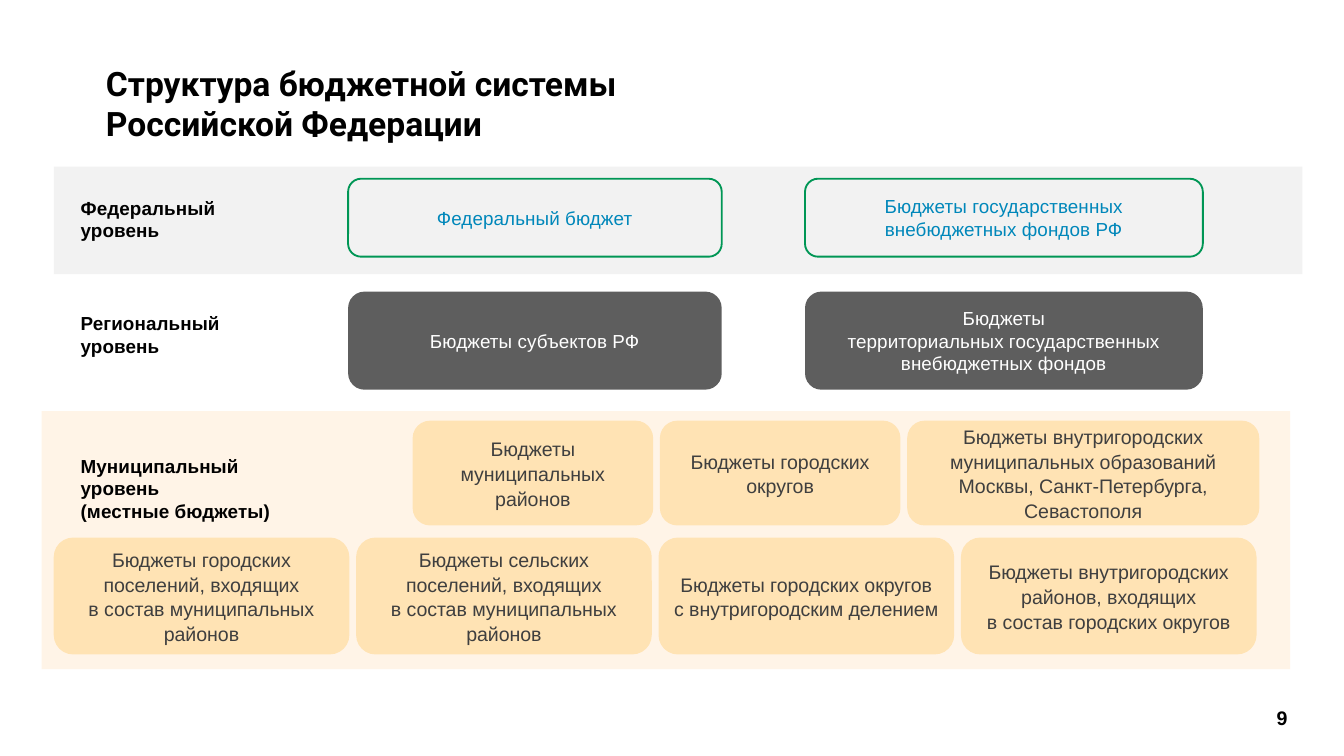
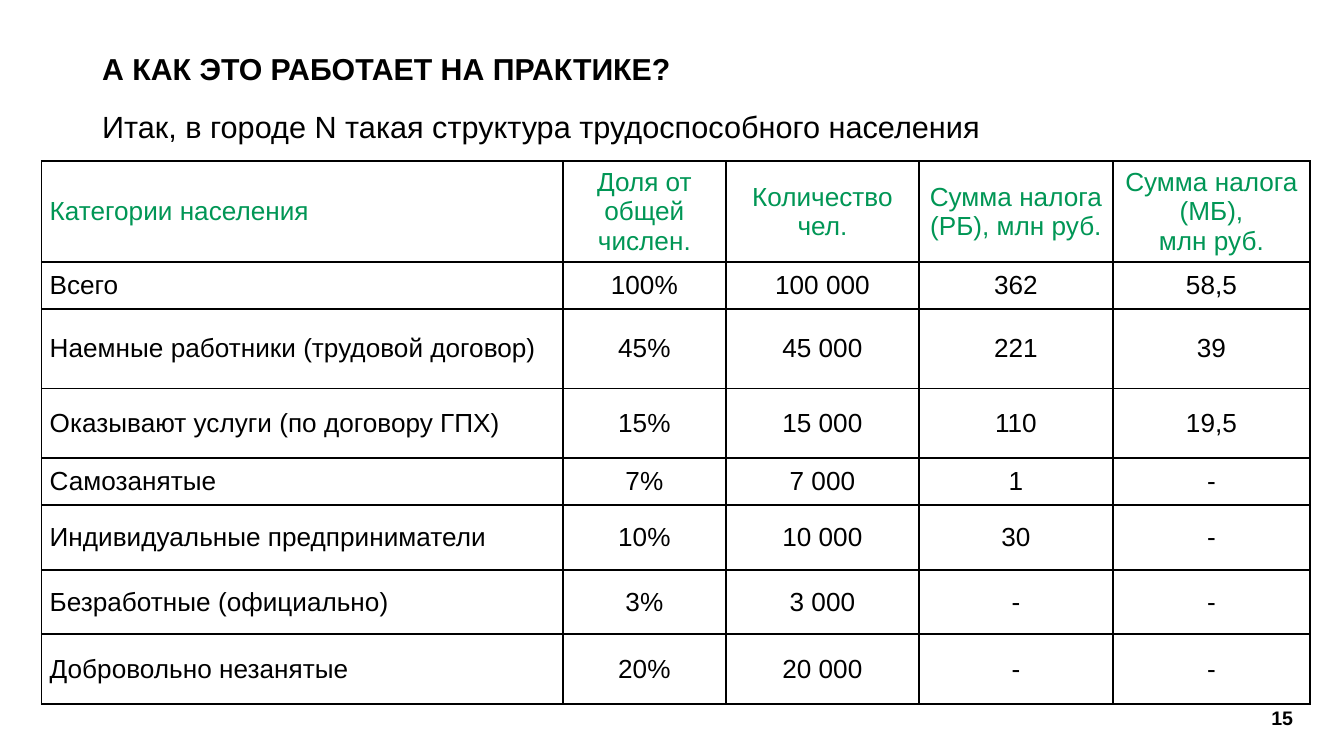
from dataclasses import dataclass

from lxml import etree
from pptx import Presentation
from pptx.dml.color import RGBColor
from pptx.enum.shapes import MSO_SHAPE
from pptx.enum.text import MSO_ANCHOR, PP_ALIGN
from pptx.oxml.ns import qn
from pptx.util import Inches, Pt

LEFT, CENTER = PP_ALIGN.LEFT, PP_ALIGN.CENTER
TOP, MIDDLE = MSO_ANCHOR.TOP, MSO_ANCHOR.MIDDLE
RECT, ROUND = MSO_SHAPE.RECTANGLE, MSO_SHAPE.ROUNDED_RECTANGLE


@dataclass(frozen=True)
class Theme:
    font: str = "Arial"
    head: str = "Roboto"
    black: str = "000000"
    white: str = "FFFFFF"
    green: str = "009655"
    blue: str = "0087BA"
    gray: str = "5E5E5E"
    ink: str = "3F3F3F"
    sand: str = "FFE3B4"
    pale: str = "F2F2F2"
    cream: str = "FFF4E7"
    title: float = 18
    ask: float = 16.2
    lead: float = 16.4
    grid: float = 14
    local: float = 10.5
    body: float = 10.13


T = Theme()


def write(frame, text, size, color, bold=False, align=LEFT, anchor=TOP,
          pad=(0.07, 0.04), font=T.font, line=None):
    """Fill a text frame or cell frame; \\n parts paragraphs, \\v breaks a line."""
    frame.text = text
    frame.word_wrap = True
    frame.vertical_anchor = anchor
    frame.margin_left = frame.margin_right = Inches(pad[0])
    frame.margin_top = frame.margin_bottom = Inches(pad[1])
    for para in frame.paragraphs:
        para.alignment = align
        if line:
            para.line_spacing = line
        para.font.name = font
        para.font.size = Pt(size)
        para.font.bold = bold
        para.font.color.rgb = RGBColor.from_string(color)


def block(slide, kind, box, fill=None, line=None):
    shape = slide.shapes.add_shape(kind, *map(Inches, box))
    shape.shadow.inherit = False
    if fill:
        shape.fill.solid()
        shape.fill.fore_color.rgb = RGBColor.from_string(fill)
    else:
        shape.fill.background()
    if line:
        shape.line.color.rgb = RGBColor.from_string(line)
        shape.line.width = Pt(1)
    else:
        shape.line.fill.background()
    return shape


# Widescreen deck, 16 to 9
deck = Presentation()
deck.slide_width = Inches(10)
deck.slide_height = Inches(10) * 9 // 16
levels, people = [deck.slides.add_slide(deck.slide_layouts[6]) for _ in range(2)]

# Page numbers
for slide, page in ((levels, "9"), (people, "15")):
    box = slide.shapes.add_textbox(*map(Inches, (9.14, 5.19, 0.8, 0.3)))
    write(box.text_frame, page, T.local, T.black, True, CENTER, MIDDLE, (0.06, 0.06))

# Budget levels: title and bands
box = levels.shapes.add_textbox(*map(Inches, (0.69, 0.42, 7.53, 0.75)))
write(box.text_frame, "Структура бюджетной системы\vРоссийской Федерации",
      T.title, T.black, True, pad=(0.1, 0.05), font=T.head)
block(levels, RECT, (0.31, 3.06, 9.29, 1.92), T.cream)
block(levels, RECT, (0.4, 1.24, 9.29, 0.8), T.pale)

# Level names
for top, high, name in (
    (1.42, 0.42, "Федеральный уровень"),
    (2.28, 0.42, "Региональный уровень"),
    (3.34, 0.59, "Муниципальный уровень\v(местные бюджеты)"),
):
    box = levels.shapes.add_textbox(*map(Inches, (0.53, top, 1.65, high)))
    write(box.text_frame, name, T.body, T.black, True)

# Federal and regional budgets
for top, high, fill, line, color, names in (
    (1.33, 0.58, None, T.green, T.blue,
     ("Федеральный бюджет", "Бюджеты государственных внебюджетных фондов РФ")),
    (2.17, 0.73, T.gray, None, T.white,
     ("Бюджеты субъектов РФ",
      "Бюджеты\vтерриториальных государственных внебюджетных фондов")),
):
    for left, wide, name in zip((2.59, 5.99), (2.78, 2.96), names):
        shape = block(levels, ROUND, (left, top, wide, high), fill, line)
        write(shape.text_frame, name, T.body, color, align=CENTER, anchor=MIDDLE)

# Local budgets, each row laid out from its left edge
gap = 0.05
for left, top, high, cards in (
    (3.07, 3.13, 0.78, (
        (1.79, "Бюджеты муниципальных районов"),
        (1.79, "Бюджеты городских округов"),
        (2.62, "Бюджеты внутригородских муниципальных образований "
               "Москвы, Санкт-Петербурга, Севастополя"))),
    (0.4, 4, 0.87, (
        (2.2, "Бюджеты городских поселений, входящих\vв состав муниципальных районов"),
        (2.2, "Бюджеты сельских поселений, входящих\vв состав муниципальных районов"),
        (2.2, "Бюджеты городских округов с внутригородским делением"),
        (2.2, "Бюджеты внутригородских районов, входящих\vв состав городских округов"))),
):
    for wide, name in cards:
        shape = block(levels, ROUND, (left, top, wide, high), T.sand)
        write(shape.text_frame, name, T.local, T.ink, align=CENTER,
              anchor=MIDDLE, line=1.05)
        left += wide + gap

# Population table
rows = (
    ("Категории населения", "Доля от общей числен.", "Количество чел.",
     "Сумма налога (РБ), млн руб.", "Сумма налога (МБ),\nмлн руб."),
    ("Всего", "100%", "100 000", "362", "58,5"),
    ("Наемные работники (трудовой договор)", "45%", "45 000", "221", "39"),
    ("Оказывают услуги (по договору ГПХ)", "15%", "15 000", "110", "19,5"),
    ("Самозанятые", "7%", "7 000", "1", "-"),
    ("Индивидуальные предприниматели", "10%", "10 000", "30", "-"),
    ("Безработные (официально)", "3%", "3 000", "-", "-"),
    ("Добровольно незанятые", "20%", "20 000", "-", "-"),
)
wides = (3.88, 1.21, 1.44, 1.44, 1.47)
highs = (0.75, 0.35, 0.59, 0.52, 0.35, 0.48, 0.48, 0.52)
grid = people.shapes.add_table(len(rows), len(wides), Inches(0.31), Inches(1.2),
                               Inches(sum(wides)), Inches(sum(highs))).table
grid.first_row = grid.horz_banding = False
for col, wide in zip(grid.columns, wides):
    col.width = Inches(wide)
for r, (row, high) in enumerate(zip(rows, highs)):
    grid.rows[r].height = Inches(high)
    for c, text in enumerate(row):
        cell = grid.cell(r, c)
        write(cell.text_frame, text, T.grid, T.black if r else T.green,
              align=CENTER if c else LEFT)
        cell.vertical_anchor = MIDDLE
        cell.margin_left = cell.margin_right = Inches(0.06)
        cell.margin_top = cell.margin_bottom = 0
        # Borders go before the fill in the cell properties
        props = cell._tc.get_or_add_tcPr()
        for side in ("a:lnL", "a:lnR", "a:lnT", "a:lnB"):
            edge = etree.SubElement(props, qn(side), w=str(Pt(1)))
            paint = etree.SubElement(edge, qn("a:solidFill"))
            etree.SubElement(paint, qn("a:srgbClr"), val=T.black)
        cell.fill.background()

# Population: heading and lead
box = people.shapes.add_textbox(*map(Inches, (0.69, 0.3, 8.62, 0.9)))
write(box.text_frame, "А КАК ЭТО РАБОТАЕТ НА ПРАКТИКЕ?\n"
      "Итак, в городе N такая структура трудоспособного населения",
      T.ask, T.black, True, anchor=MIDDLE, line=0.8)
lead = box.text_frame.paragraphs[1]
lead.font.size = Pt(T.lead)
lead.font.bold = False
lead.space_before = Pt(15.5)

deck.save("out.pptx")
